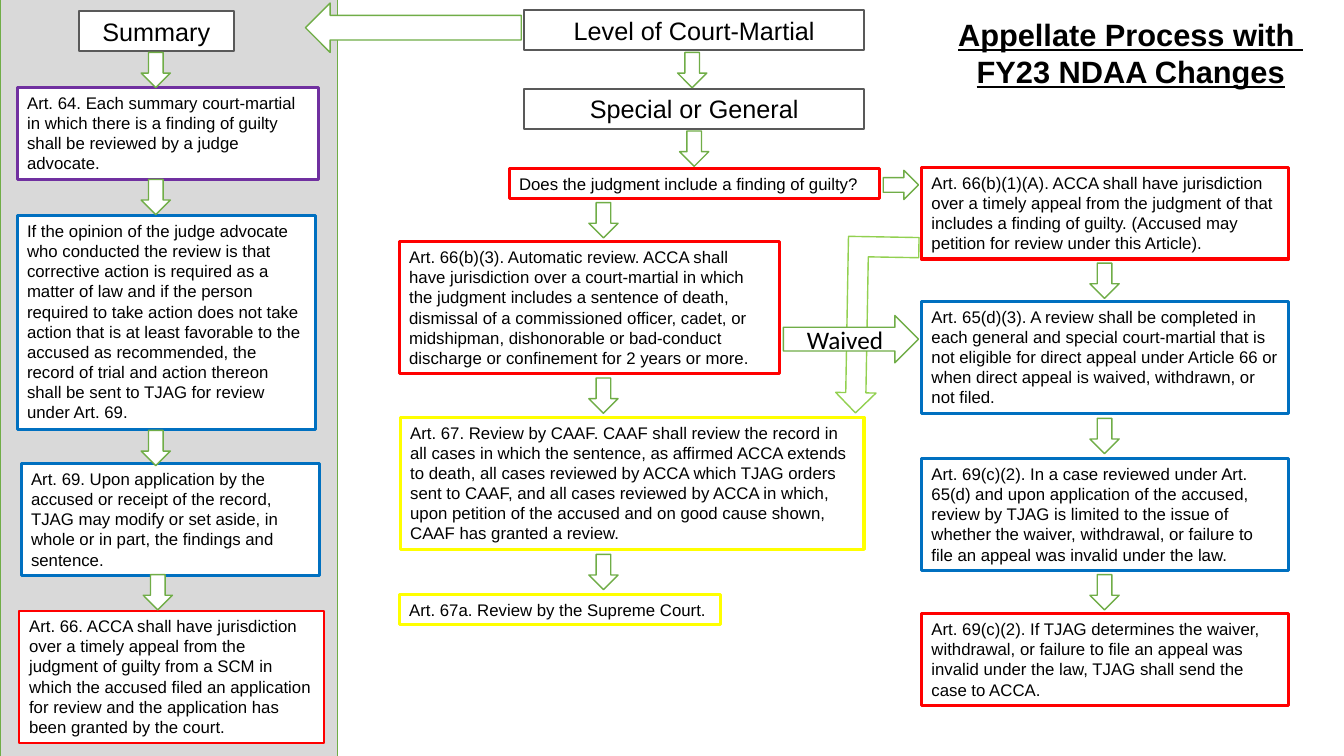
"""Build the court-martial appellate process flowchart slide."""
from dataclasses import dataclass

from pptx import Presentation
from pptx import util as u
from pptx.dml.color import RGBColor
from pptx.enum import shapes, text

PX = u.Inches(1) // 100
SHAPE = shapes.MSO_SHAPE


@dataclass(frozen=True)
class Theme:
    """Colours, fonts and type sizes in points."""

    ink: str = "000000"
    paper: str = "FFFFFF"
    sidebar: str = "D9D9D9"
    frame: str = "595959"
    arrow: str = "70AD47"
    bypass: str = "92D050"
    purple: str = "7030A0"
    blue: str = "0070C0"
    red: str = "FF0000"
    yellow: str = "FFFF00"
    font: str = "Arial"
    label_font: str = "Calibri"
    title: int = 22
    heading: int = 18
    body: int = 12


THEME = Theme()

HEADINGS = [
    ("Level of Court-Martial", (520, 10, 337, 40)),
    ("Special or General", (520, 88, 337, 40)),
    ("Summary", (78, 11, 154, 40)),
]

STEPS = [
    ("Art. 64. Each summary court-martial in which there is a finding of guilty shall be "
     "reviewed by a judge advocate.", (17, 87, 299, 91), THEME.purple, 2.25),
    ("If the opinion of the judge advocate who conducted the review is that corrective "
     "action is required as a matter of law and if the person required to take action does "
     "not take action that is at least favorable to the accused as recommended, the record "
     "of trial and action thereon shall be sent to TJAG for review under Art. 69.",
     (17, 214, 296, 212), THEME.blue, 2.25),
    ("Art. 69. Upon application by the accused or receipt of the record, TJAG may modify or "
     "set aside, in whole or in part, the findings and sentence.",
     (21, 460, 296, 111), THEME.blue, 2.25),
    ("Art. 66. ACCA shall have jurisdiction over a timely appeal from the judgment of guilty "
     "from a SCM in which the accused filed an application for review and the application "
     "has been granted by the court.", (19, 606, 302, 131), THEME.red, 1.5),
    ("Does the judgment include a finding of guilty?",
     (505, 167, 367, 30), THEME.red, 2.25),
    ("Art. 66(b)(3). Automatic review. ACCA shall have jurisdiction over a court-martial in "
     "which the judgment includes a sentence of death, dismissal of a commissioned officer, "
     "cadet, or midshipman, dishonorable or bad-conduct discharge or confinement for 2 years "
     "or more.", (396, 240, 377, 131), THEME.red, 2.25),
    ("Art. 67. Review by CAAF. CAAF shall review the record in all cases in which the "
     "sentence, as affirmed ACCA extends to death, all cases reviewed by ACCA which TJAG "
     "orders sent to CAAF, and all cases reviewed by ACCA in which, upon petition of the "
     "accused and on good cause shown, CAAF has granted a review.",
     (397, 414, 460, 131), THEME.yellow, 2.25),
    ("Art. 67a. Review by the Supreme Court.", (396, 590, 319, 30), THEME.yellow, 2.25),
    ("Art. 66(b)(1)(A). ACCA shall have jurisdiction over a timely appeal from the judgment "
     "of that includes a finding of guilty. (Accused may petition for review under this "
     "Article).", (914, 166, 364, 91), THEME.red, 2.25),
    ("Art. 65(d)(3). A review shall be completed in each general and special court-martial "
     "that is not eligible for direct appeal under Article 66 or when direct appeal is "
     "waived, withdrawn, or not filed.", (914, 299, 364, 111), THEME.blue, 2.25),
    ("Art. 69(c)(2). In a case reviewed under Art. 65(d) and upon application of the "
     "accused, review by TJAG is limited to the issue of whether the waiver, withdrawal, or "
     "failure to file an appeal was invalid under the law.",
     (914, 455, 364, 111), THEME.blue, 2.25),
    ("Art. 69(c)(2). If TJAG determines the waiver, withdrawal, or failure to file an appeal "
     "was invalid under the law, TJAG shall send the case to ACCA.",
     (914, 609, 364, 91), THEME.red, 2.25),
]

DOWN_ARROWS = [
    (140, 52), (140, 178), (140, 427), (142, 570),
    (672, 52), (674, 130),
    (584, 201), (584, 375), (584, 550),
    (1081, 261), (1081, 415), (1081, 570),
]


def place(item, bounds):
    """Move and size an item to (left, top, width, height) in px."""
    item.left, item.top, item.width, item.height = (value * PX for value in bounds)


def write(item, *lines, size, font=THEME.font, align=text.PP_ALIGN.LEFT,
          anchor=text.MSO_ANCHOR.TOP, fit=text.MSO_AUTO_SIZE.SHAPE_TO_FIT_TEXT,
          bold=False, underline=False):
    """Fill an item with one formatted paragraph per line."""
    frame = item.text_frame
    frame.word_wrap = True
    frame.auto_size = fit
    frame.vertical_anchor = anchor
    for index, line in enumerate(lines):
        para = frame.add_paragraph() if index else frame.paragraphs[0]
        para.alignment = align
        span = para.add_run()
        span.text = line
        span.font.size = u.Pt(size)
        span.font.name = font
        span.font.bold = bold
        span.font.underline = underline
        span.font.color.rgb = RGBColor.from_string(THEME.ink)


def add_figure(page, kind, bounds, line=THEME.arrow, weight=1, fill=THEME.paper, turn=0):
    """Add an outlined preset shape; a fill of None leaves it open."""
    figure = page.shapes.add_shape(kind, *(value * PX for value in bounds))
    figure.shadow.inherit = False
    figure.rotation = turn
    figure.line.color.rgb = RGBColor.from_string(line)
    figure.line.width = u.Pt(weight)
    if fill is None:
        figure.fill.background()
    else:
        figure.fill.solid()
        figure.fill.fore_color.rgb = RGBColor.from_string(fill)
    return figure


def add_title(page):
    """Set the slide title in its placeholder."""
    title = page.shapes.title
    place(title, (927, 11, 389, 84))
    write(title, "Appellate Process with ", "FY23 NDAA Changes", size=THEME.title,
          align=text.PP_ALIGN.CENTER, bold=True, underline=True)


def add_boxes(page):
    """Add the heading boxes and the step boxes."""
    for label, bounds in HEADINGS:
        box = add_figure(page, SHAPE.RECTANGLE, bounds, THEME.frame, 1.5)
        write(box, label, size=THEME.heading, align=text.PP_ALIGN.CENTER)
    for words, bounds, color, weight in STEPS:
        box = add_figure(page, SHAPE.RECTANGLE, bounds, color, weight)
        write(box, words, size=THEME.body)


def add_arrows(page):
    """Add the block arrows that link the boxes."""
    for left, top in DOWN_ARROWS:
        add_figure(page, SHAPE.DOWN_ARROW, (left, top, 29, 35))
    add_figure(page, SHAPE.DOWN_ARROW, (879, 166, 29, 35), turn=270)
    add_figure(page, SHAPE.LEFT_ARROW, (303, 3, 214, 49))
    waived = add_figure(page, SHAPE.RIGHT_ARROW, (777, 313, 134, 47))
    write(waived, "Waived", size=THEME.heading, font=THEME.label_font,
          align=text.PP_ALIGN.CENTER, anchor=text.MSO_ANCHOR.MIDDLE,
          fit=text.MSO_AUTO_SIZE.NONE)


def main():
    """Build and save the deck."""
    deck = Presentation()
    deck.slide_width, deck.slide_height = 1333 * PX, 750 * PX
    page = deck.slides.add_slide(deck.slide_layouts.get_by_name("Title Only"))
    add_title(page)
    add_figure(page, SHAPE.BENT_UP_ARROW, (830, 235, 80, 175), THEME.bypass,
               fill=None, turn=181)
    add_figure(page, SHAPE.RECTANGLE, (0, -3, 335, 755), fill=THEME.sidebar)
    add_boxes(page)
    add_arrows(page)
    deck.save("out.pptx")


if __name__ == "__main__":
    main()
